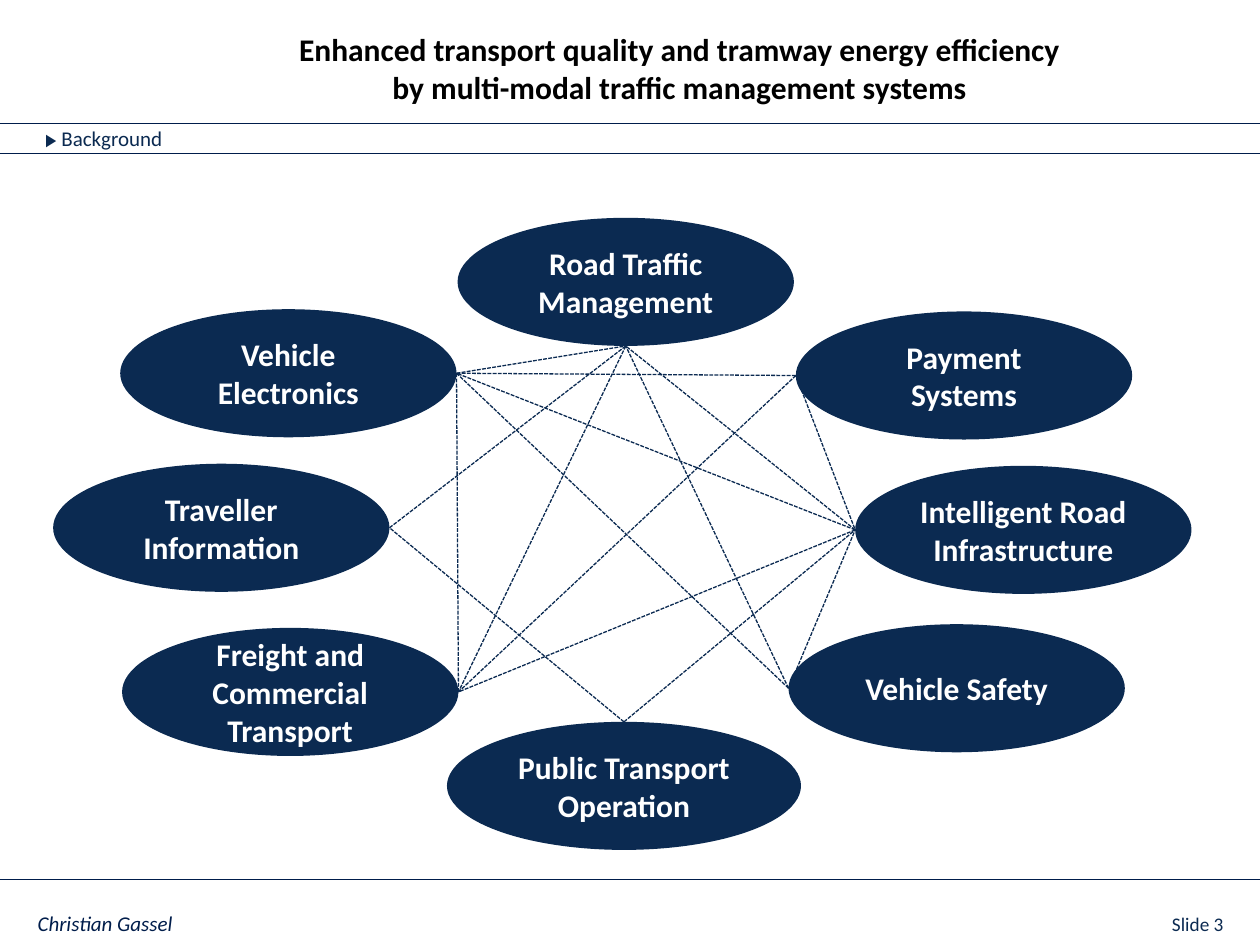
from lxml import etree
from pptx import Presentation
from pptx.dml.color import RGBColor
from pptx.enum.dml import MSO_LINE
from pptx.enum.shapes import MSO_CONNECTOR, MSO_SHAPE
from pptx.enum.text import MSO_ANCHOR, PP_ALIGN
from pptx.oxml.ns import qn
from pptx.util import Pt

STRAIGHT = MSO_CONNECTOR.STRAIGHT
ELLIPSE = MSO_SHAPE.OVAL
DASH = MSO_LINE.SQUARE_DOT
TOP, MIDDLE = MSO_ANCHOR.TOP, MSO_ANCHOR.MIDDLE
LEFT, CENTER, RIGHT = PP_ALIGN.LEFT, PP_ALIGN.CENTER, PP_ALIGN.RIGHT

COLORS = {"navy": "0B2A51", "rule": "001D4B", "black": "000000", "white": "FFFFFF"}
WIDTH, HEIGHT = 720, 540
NODE_WIDTH, NODE_HEIGHT = 192.2, 73.2

NODES = {
    "road": (261.5, 124.5, NODE_WIDTH, "bottom", ["Road Traffic Management"]),
    "payment": (454.8, 178, NODE_WIDTH, "left", ["Payment Systems"]),
    "traveller": (30.4, 265, NODE_WIDTH, "right", ["Traveller Information"]),
    "safety": (450.6, 356.7, NODE_WIDTH, "left", ["Vehicle Safety"]),
    "electronics": (68.7, 176.7, NODE_WIDTH, "right", ["Vehicle Electronics"]),
    "freight": (69.8, 358.8, NODE_WIDTH, "right", ["Freight and Commercial Transport"]),
    "public": (255.4, 412.5, 202.3, "top", ["Public Transport Operation"]),
    "infrastructure": (488.7, 266.2, NODE_WIDTH, "left", ["Intelligent Road", "Infrastructure"]),
}
LINKS = [
    ("safety", "infrastructure"), ("public", "traveller"), ("safety", "road"),
    ("infrastructure", "electronics"), ("safety", "electronics"),
    ("electronics", "payment"), ("infrastructure", "freight"),
    ("infrastructure", "road"), ("payment", "freight"), ("electronics", "road"),
    ("payment", "infrastructure"), ("public", "infrastructure"),
    ("freight", "electronics"), ("traveller", "road"), ("road", "freight"),
]
ANCHORS = {"top": (0.5, 0), "bottom": (0.5, 1), "left": (0, 0.5), "right": (1, 0.5)}


class SlideBuilder:
    """Draw styled elements on one slide, with lengths in points."""

    def __init__(self, slide, font_name="Calibri"):
        self.slide = slide
        self.font_name = font_name

    def color(self, name):
        return RGBColor.from_string(COLORS[name])

    def fill_text(self, frame, paragraphs, color, align=LEFT, anchor=TOP, bold=False, italic=False):
        frame.word_wrap = True
        frame.vertical_anchor = anchor
        for index, runs in enumerate(paragraphs):
            paragraph = frame.add_paragraph() if index else frame.paragraphs[0]
            paragraph.alignment = align
            for text, size in runs:
                run = paragraph.add_run()
                run.text = text
                run.font.name = self.font_name
                run.font.size = Pt(size)
                run.font.bold = bold
                run.font.italic = italic
                run.font.color.rgb = self.color(color)

    def text(self, left, top, width, height, runs, color="navy", **style):
        box = self.slide.shapes.add_textbox(Pt(left), Pt(top), Pt(width), Pt(height))
        self.fill_text(box.text_frame, [runs], color, **style)

    def node(self, left, top, width, lines):
        shape = self.slide.shapes.add_shape(ELLIPSE, Pt(left), Pt(top), Pt(width), Pt(NODE_HEIGHT))
        shape.shadow.inherit = False
        shape.fill.solid()
        shape.fill.fore_color.rgb = self.color("navy")
        shape.line.fill.background()
        paragraphs = [[(line, 18)] for line in lines]
        self.fill_text(shape.text_frame, paragraphs, "white", align=CENTER, anchor=MIDDLE, bold=True)

    def line(self, start, end, color, weight, dash=None):
        connector = self.slide.shapes.add_connector(STRAIGHT, *map(Pt, start + end))
        connector.line.color.rgb = self.color(color)
        connector.line.width = Pt(weight)
        if dash is not None:
            connector.line.dash_style = dash
        etree.SubElement(connector._element.spPr, qn("a:effectLst"))


def anchor_point(name):
    left, top, width, side, _ = NODES[name]
    across, down = ANCHORS[side]
    return left + across * width, top + down * NODE_HEIGHT


def main():
    presentation = Presentation()
    presentation.slide_width, presentation.slide_height = Pt(WIDTH), Pt(HEIGHT)
    builder = SlideBuilder(presentation.slides.add_slide(presentation.slide_layouts[6]))

    title = "Enhanced transport quality and tramway energy efficiency by multi-modal traffic management systems"
    builder.text(155.5, 13.7, 465.8, 67.7, [(title, 18)], "black", align=CENTER, bold=True)
    builder.text(14.4, 517, 600, 22, [("Christian Gassel", 12)], "rule", italic=True)
    builder.text(641.5, 517.7, 64.8, 20, [("Slide 3", 11)], align=RIGHT)
    for height in (502.6, 70.6, 87.8):
        builder.line((0, height), (WIDTH, height), "rule", 1)
    builder.text(18.7, 68.4, 436, 21.6, [("▶", 10), (" Background", 12)], anchor=MIDDLE)

    for left, top, width, _, lines in NODES.values():
        builder.node(left, top, width, lines)
    for start, end in LINKS:
        builder.line(anchor_point(start), anchor_point(end), "navy", 0.75, DASH)

    presentation.save("out.pptx")


if __name__ == "__main__":
    main()
